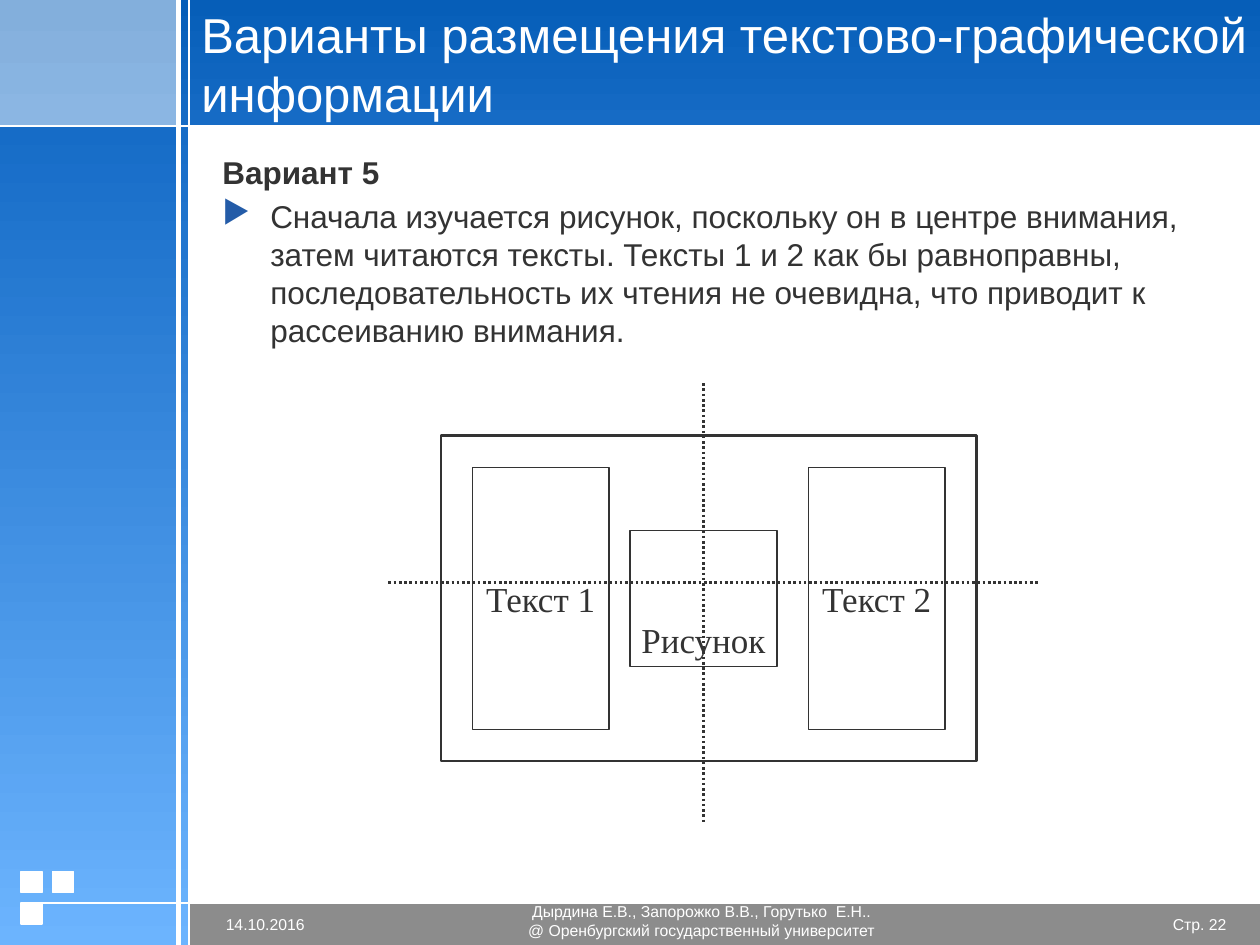
import dataclasses

import pptx
import pptx.dml.color
import pptx.enum.dml
import pptx.enum.shapes
import pptx.enum.text
import pptx.oxml
import pptx.oxml.ns
import pptx.util

ALIGN = pptx.enum.text.PP_ALIGN
ANCHOR = pptx.enum.text.MSO_ANCHOR
DOTTED = pptx.enum.dml.MSO_LINE.ROUND_DOT
COLUMNS, ROWS = 120, 90


@dataclasses.dataclass(frozen=True)
class Theme:
    background: str = "BDE0FF"
    white: str = "FFFFFF"
    ink: str = "333333"
    footer: str = "8C8C8C"
    bullet: str = "245CA8"
    corner: tuple = ("83AFDC", "8BB6E3")
    sidebar: tuple = ("166CC7", "6CB4FE")
    banner: tuple = ("065EB8", "166BC5")
    font: str = "Arial"
    diagram_font: str = "Times New Roman"
    title_size: float = 28
    body_size: float = 18
    diagram_size: float = 20
    footer_size: float = 9


class SlideBuilder:
    """Draws styled elements on one slide, placed on a grid of columns and rows."""

    def __init__(self, presentation, theme):
        self.theme = theme
        self.column = presentation.slide_width / COLUMNS
        self.row = presentation.slide_height / ROWS
        self.slide = presentation.slides.add_slide(presentation.slide_layouts[6])
        self.paint(self.slide.background.fill, theme.background)

    def place(self, left, top, width, height):
        return (round(left * self.column), round(top * self.row),
                round(width * self.column), round(height * self.row))

    def color(self, value):
        return pptx.dml.color.RGBColor.from_string(value)

    def paint(self, fill, value):
        if value is None:
            fill.background()
        elif isinstance(value, tuple):
            fill.gradient()
            fill.gradient_angle = 270
            for stop, shade in zip(fill.gradient_stops, value):
                stop.color.rgb = self.color(shade)
        else:
            fill.solid()
            fill.fore_color.rgb = self.color(value)

    def stroke(self, line, value, width, dash=None):
        line.color.rgb = self.color(value)
        line.width = pptx.util.Pt(width)
        if dash:
            line.dash_style = dash

    def rectangle(self, box, fill=None, line=None, width=0.75):
        shape = self.slide.shapes.add_shape(
            pptx.enum.shapes.MSO_SHAPE.RECTANGLE, *self.place(*box))
        shape.shadow.inherit = False
        self.paint(shape.fill, fill)
        if line:
            self.stroke(shape.line, line, width)
        else:
            shape.line.fill.background()
        return shape

    def line(self, start, end, value, width, dash=None):
        connector = self.slide.shapes.add_connector(
            pptx.enum.shapes.MSO_CONNECTOR.STRAIGHT, *self.place(*start, *end))
        self.stroke(connector.line, value, width, dash)
        properties = connector._element.spPr
        properties.append(pptx.oxml.parse_xml(
            f'<a:effectLst {pptx.oxml.ns.nsdecls("a")}/>'))

    def set_text(self, text_frame, text, size, color, font, align, anchor):
        text_frame.text = text
        text_frame.vertical_anchor = anchor
        for paragraph in text_frame.paragraphs:
            paragraph.alignment = align
            for run in paragraph.runs:
                run.font.size = pptx.util.Pt(size)
                run.font.name = font
                run.font.color.rgb = self.color(color)

    def text(self, box, text, size, color, align=ALIGN.LEFT, anchor=ANCHOR.MIDDLE,
             margin=None):
        text_frame = self.slide.shapes.add_textbox(*self.place(*box)).text_frame
        text_frame.word_wrap = True
        if margin is not None:
            text_frame.margin_left = text_frame.margin_right = margin
            text_frame.margin_top = text_frame.margin_bottom = margin
        self.set_text(text_frame, text, size, color, self.theme.font, align, anchor)
        return text_frame

    def footer(self, box, text, align):
        self.text(box, text, self.theme.footer_size, self.theme.white, align, margin=0)

    def body(self, box, heading, statement):
        text_frame = self.text(box, f"{heading}\n{statement}", self.theme.body_size,
                               self.theme.ink, anchor=ANCHOR.TOP)
        first, second = text_frame.paragraphs
        first.runs[0].font.bold = True
        for paragraph in (first, second):
            paragraph.space_before = pptx.util.Pt(0.2 * self.theme.body_size)
        properties = second._p.get_or_add_pPr()
        indent = pptx.util.Inches(0.38)
        properties.set("marL", str(indent))
        properties.set("indent", str(-indent))
        namespace = pptx.oxml.ns.nsdecls("a")
        for markup in (
            f'<a:buClr {namespace}><a:srgbClr val="{self.theme.bullet}"/></a:buClr>',
            f'<a:buChar {namespace} char="▶"/>',
        ):
            properties.append(pptx.oxml.parse_xml(markup))

    def block(self, box, label, anchor=ANCHOR.MIDDLE):
        text_frame = self.rectangle(box, line=self.theme.ink).text_frame
        text_frame.word_wrap = False
        self.set_text(text_frame, label, self.theme.diagram_size, self.theme.ink,
                      self.theme.diagram_font, ALIGN.CENTER, anchor)


def draw_frame(builder):
    theme = builder.theme
    for box, fill in (
        ((18, 12, 102, 74), theme.white),
        ((18, 86, 102, 4), theme.footer),
        ((0, 0, 18, 12), theme.corner),
        ((0, 12, 18, 78), theme.sidebar),
        ((17, 0, 103, 12), theme.banner),
    ):
        builder.rectangle(box, fill)
    for left, top in ((2, 86), (2, 83), (5, 83)):
        builder.rectangle((left, top, 2, 2), theme.white, theme.white)
    for start, end, width in (
        ((18, 0), (18, 90), 1),
        ((17, 0), (17, 90), 3),
        ((120, 12), (0, 12), 1),
        ((120, 86), (2, 86), 1),
    ):
        builder.line(start, end, theme.white, width)
    builder.footer((110, 87, 6.8, 2), "Стр. 22", ALIGN.RIGHT)
    builder.footer((21.5, 87, 14.5, 2), "14.10.2016", ALIGN.LEFT)
    builder.footer((32.6, 84, 68.4, 7.3),
                   "Дырдина Е.В., Запорожко В.В., Горутько  Е.Н..\n"
                   "@ Оренбургский государственный университет", ALIGN.CENTER)


def draw_diagram(builder):
    ink = builder.theme.ink
    builder.rectangle((42, 41.5, 51, 31), line=ink, width=1.5)
    builder.line((67, 36.5), (67, 78.5), ink, 1.5, DOTTED)
    builder.line((37, 55.5), (99, 55.5), ink, 1.5, DOTTED)
    builder.block((60, 50.5, 14, 13), "Рисунок", ANCHOR.BOTTOM)
    for left, label in ((45, "Текст 1"), (77, "Текст 2")):
        builder.block((left, 44.5, 13, 25), label)


def main():
    presentation = pptx.Presentation()
    presentation.slide_width = pptx.util.Inches(10)
    presentation.slide_height = pptx.util.Inches(7.5)
    theme = Theme()
    builder = SlideBuilder(presentation, theme)
    draw_frame(builder)
    builder.text((18, 1, 105, 10), "Варианты размещения текстово-графической информации",
                 theme.title_size, theme.white)
    builder.body((20, 14, 98, 33), "Вариант 5",
                 "Сначала изучается рисунок, поскольку он в центре внимания, затем "
                 "читаются тексты. Тексты 1 и 2 как бы равноправны, последовательность "
                 "их чтения не очевидна, что приводит к рассеиванию внимания.")
    draw_diagram(builder)
    presentation.save("out.pptx")


if __name__ == "__main__":
    main()
